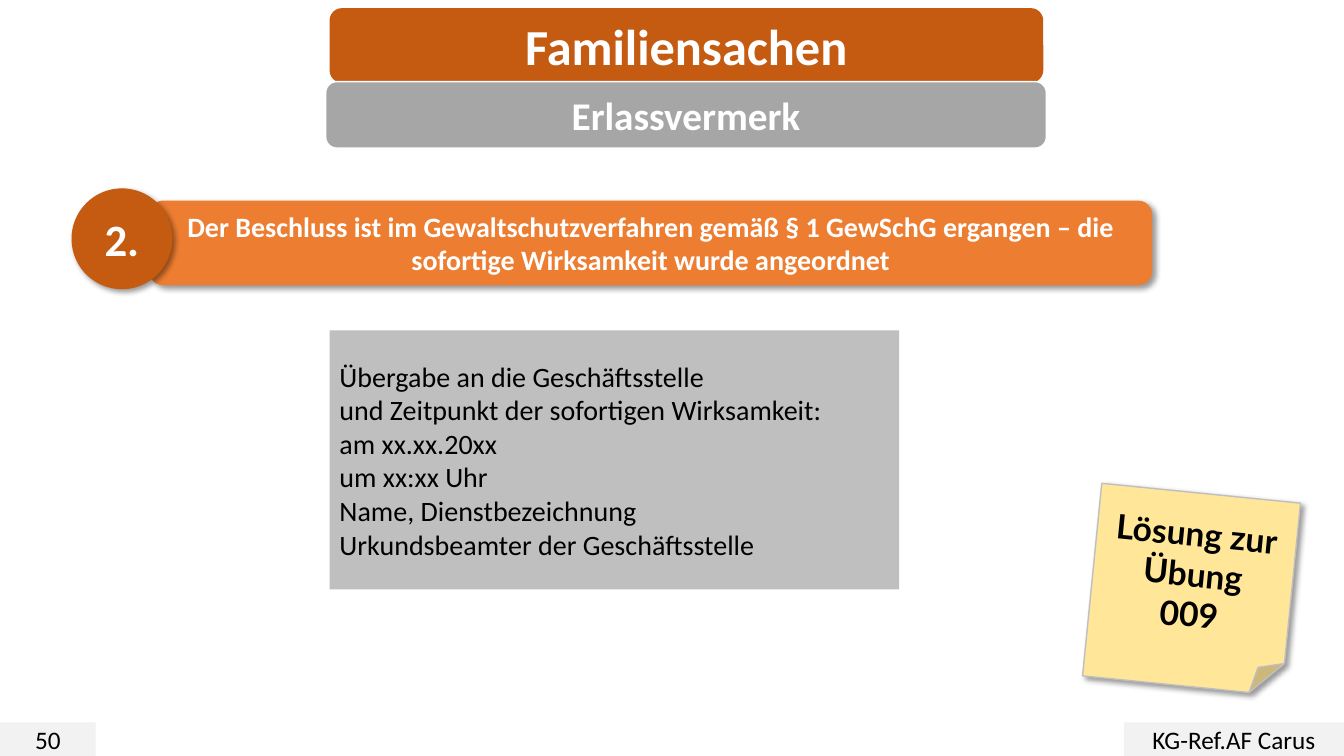
from dataclasses import dataclass

from pptx import Presentation
from pptx.dml.color import RGBColor
from pptx.enum.shapes import MSO_SHAPE
from pptx.enum.text import MSO_ANCHOR, PP_ALIGN
from pptx.oxml import parse_xml
from pptx.oxml.ns import nsdecls, qn
from pptx.util import Pt

RECT = MSO_SHAPE.RECTANGLE
ROUND = MSO_SHAPE.ROUNDED_RECTANGLE
OVAL = MSO_SHAPE.OVAL
NOTE = MSO_SHAPE.FOLDED_CORNER
MIDDLE = MSO_ANCHOR.MIDDLE
LEFT, CENTER = PP_ALIGN.LEFT, PP_ALIGN.CENTER


@dataclass(frozen=True)
class Theme:
    # Colours
    rust: str = "C55A11"
    orange: str = "ED7D31"
    gray: str = "A6A6A6"
    silver: str = "BFBFBF"
    pale: str = "F2F2F2"
    cream: str = "FFE699"
    white: str = "FFFFFF"
    black: str = "000000"
    # Fonts
    font: str = "Calibri"
    script: str = "Lato"
    # Type sizes
    title: int = 36
    digit: int = 32
    sub: int = 28
    note: int = 24
    body: int = 20
    foot: int = 18


THEME = Theme()


def add_box(slide, kind, box, fill, line=None):
    shape = slide.shapes.add_shape(kind, *map(Pt, box))
    shape.shadow.inherit = False
    shape.fill.solid()
    shape.fill.fore_color.rgb = RGBColor.from_string(fill)
    if line:
        shape.line.color.rgb = RGBColor.from_string(line)
        shape.line.width = Pt(1)
    else:
        shape.line.fill.background()
    return shape


def add_shade(shape):
    effects = shape._element.spPr.find(qn("a:effectLst"))
    effects.append(parse_xml(
        f'<a:outerShdw {nsdecls("a")} blurRad="{Pt(4)}" dist="{Pt(3)}" '
        f'dir="2700000" algn="tl" rotWithShape="0"><a:srgbClr val="{THEME.black}">'
        '<a:alpha val="40000"/></a:srgbClr></a:outerShdw>'))


def put_text(shape, lines, size, color, bold=False, align=CENTER, font=THEME.font):
    frame = shape.text_frame
    frame.word_wrap = True
    frame.vertical_anchor = MIDDLE
    frame.text = "\n".join(lines)
    for para in frame.paragraphs:
        para.alignment = align
        para.font.name = font
        para.font.size = Pt(size)
        para.font.bold = bold
        para.font.color.rgb = RGBColor.from_string(color)


def add_head(slide):
    title = add_box(slide, ROUND, (235.4, 5.8, 509.8, 53.3), THEME.rust)
    put_text(title, ["Familiensachen"], THEME.title, THEME.white, True)
    sub = add_box(slide, ROUND, (232.6, 58.3, 514.8, 47.5), THEME.gray, THEME.white)
    put_text(sub, ["Erlassvermerk"], THEME.sub, THEME.white, True)


def add_foot(slide, left, width, text):
    foot = add_box(slide, RECT, (left, 516, width, 24), THEME.pale)
    put_text(foot, [text], THEME.foot, THEME.black)


def add_note(slide, lines):
    note = add_box(slide, NOTE, (779.8, 352, 142.6, 138.2), THEME.cream, THEME.silver)
    note.rotation = 5.7
    add_shade(note)
    put_text(note, lines, THEME.note, THEME.black, True, font=THEME.script)


def add_form(slide, lines):
    form = add_box(slide, RECT, (235.4, 236, 406.8, 185), THEME.silver)
    put_text(form, lines, THEME.body, THEME.black, align=LEFT)


def add_case(slide, digit, text):
    bar = add_box(slide, ROUND, (106.6, 143.3, 716.4, 60.5), THEME.orange)
    add_shade(bar)
    put_text(bar, [text], THEME.body, THEME.white, True)
    disc = add_box(slide, OVAL, (51.1, 134.6, 72, 72), THEME.rust)
    add_shade(disc)
    put_text(disc, [digit], THEME.digit, THEME.white, True)


def main():
    deck = Presentation()
    deck.slide_width, deck.slide_height = Pt(960), Pt(540)
    slide = deck.slides.add_slide(deck.slide_layouts[6])

    # Headings and footer
    add_head(slide)
    add_foot(slide, 0, 68.4, "50")
    add_foot(slide, 802.8, 157.2, "KG-Ref.AF Carus")

    # Sticky note
    add_note(slide, ["Lösung zur", "Übung", "009"])

    # Endorsement wording
    add_form(slide, [
        "Übergabe an die Geschäftsstelle",
        "und Zeitpunkt der sofortigen Wirksamkeit:",
        "am xx.xx.20xx",
        "um xx:xx Uhr",
        "Name, Dienstbezeichnung",
        "Urkundsbeamter der Geschäftsstelle",
    ])

    # Numbered case
    add_case(slide, "2.", "Der Beschluss ist im Gewaltschutzverfahren gemäß § 1 GewSchG "
             "ergangen – die sofortige Wirksamkeit wurde angeordnet")

    deck.save("out.pptx")


if __name__ == "__main__":
    main()
